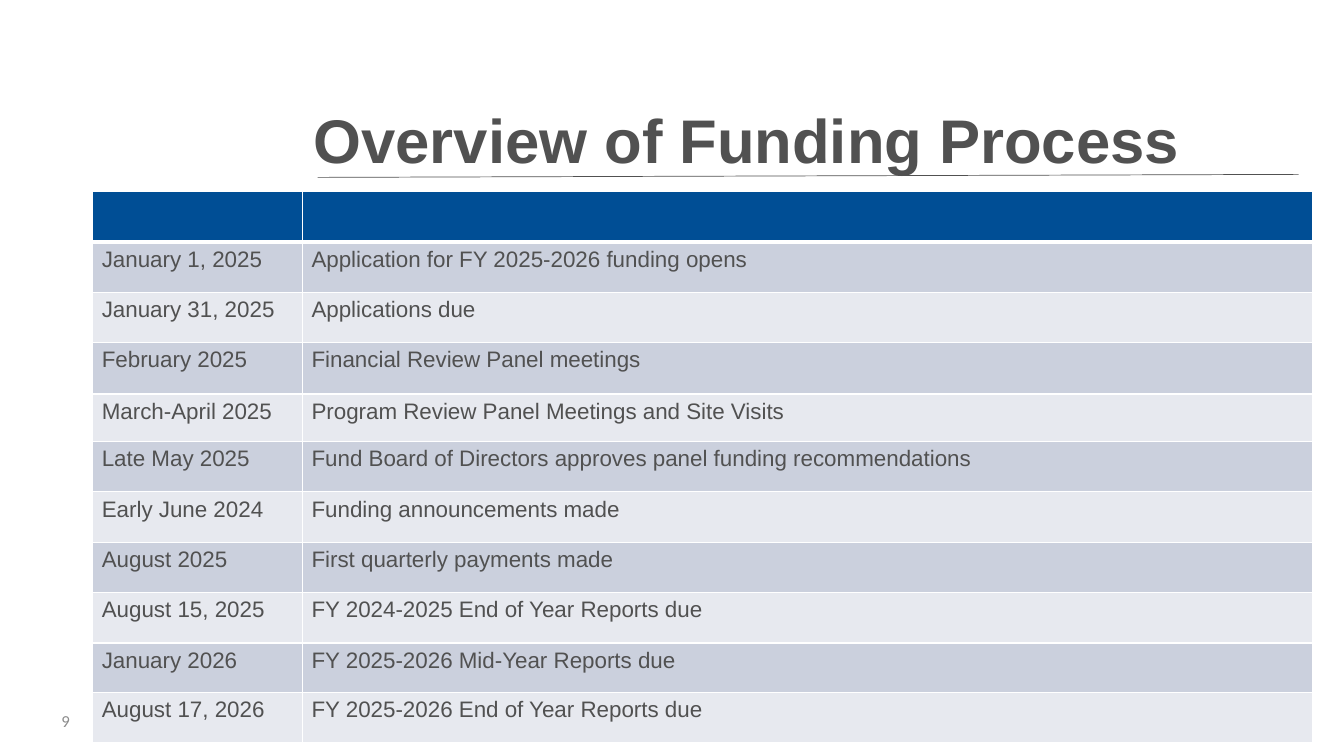
"""Build the funding process timeline slide."""
from dataclasses import dataclass

from lxml import etree
from pptx import Presentation
from pptx import util as u
from pptx.dml.color import RGBColor
from pptx.enum import shapes, text
from pptx.oxml.ns import qn

PX = 9144
COLORS = {
    "ink": "515151",
    "muted": "8C8C8C",
    "header": "004E95",
    "odd": "CBD0DD",
    "even": "E7E9EF",
    "border": "FFFFFF",
}
THIN, THICK = 1.06, 3.19
COLUMN_WIDTHS = (208, 1002)
HEADER_HEIGHT = 50


@dataclass
class Milestone:
    date: str
    event: str
    height: int = 50


MILESTONES = [
    Milestone("January 1, 2025", "Application for FY 2025-2026 funding opens"),
    Milestone("January 31, 2025", "Applications due"),
    Milestone("February 2025", "Financial Review Panel meetings", 51),
    Milestone("March-April 2025", "Program Review Panel Meetings and Site Visits", 47),
    Milestone("Late May 2025", "Fund Board of Directors approves panel funding recommendations"),
    Milestone("Early June 2024", "Funding announcements made"),
    Milestone("August 2025", "First quarterly payments made"),
    Milestone("August 15, 2025", "FY 2024-2025 End of Year Reports due"),
    Milestone("January 2026", "FY 2025-2026 Mid-Year Reports due", 49),
    Milestone("August 17, 2026", "FY 2025-2026 End of Year Reports due"),
]


def px(n: int) -> u.Emu:
    return u.Emu(n * PX)


def rgb(name: str) -> RGBColor:
    return RGBColor.from_string(COLORS[name])


def style(p, size: int, color: str, font: str = "Arial", bold: bool = False) -> None:
    p.alignment = text.PP_ALIGN.LEFT
    for r in p.runs:
        r.font.size = u.Pt(size)
        r.font.name = font
        r.font.bold = bold
        r.font.color.rgb = rgb(color)


def add_borders(cell, top: float, bottom: float) -> None:
    tc_pr = cell._tc.get_or_add_tcPr()
    for side, width in (("L", THIN), ("R", THIN), ("T", top), ("B", bottom)):
        ln = etree.SubElement(tc_pr, qn(f"a:ln{side}"), w=str(int(u.Pt(width))))
        fill = etree.SubElement(ln, qn("a:solidFill"))
        etree.SubElement(fill, qn("a:srgbClr"), val=COLORS["border"])


def fill_cell(cell, color: str, top: float, bottom: float) -> None:
    add_borders(cell, top, bottom)
    cell.fill.solid()
    cell.fill.fore_color.rgb = rgb(color)
    cell.margin_left = cell.margin_right = px(9)
    cell.margin_top = cell.margin_bottom = px(5)


def add_title(s) -> None:
    sp = s.shapes.title
    sp.left, sp.top, sp.width, sp.height = px(301), px(54), px(940), px(126)
    tf = sp.text_frame
    tf.text = "Overview of Funding Process"
    tf.auto_size = text.MSO_AUTO_SIZE.NONE
    tf.vertical_anchor = text.MSO_ANCHOR.BOTTOM
    p = tf.paragraphs[0]
    p.line_spacing = 0.9
    style(p, 44, "ink", bold=True)


def add_rule(s) -> None:
    line = s.shapes.add_connector(
        shapes.MSO_CONNECTOR.STRAIGHT, px(315), px(176), px(1288), px(173))
    line.line.color.rgb = rgb("ink")
    line.line.width = u.Pt(0.5)
    etree.SubElement(line._element.spPr, qn("a:effectLst"))


def add_page_number(s) -> None:
    sp = s.shapes.add_textbox(px(51), px(695), px(300), px(40))
    tf = sp.text_frame
    tf.word_wrap = True
    tf.vertical_anchor = text.MSO_ANCHOR.MIDDLE
    tf.text = "9"
    style(tf.paragraphs[0], 12, "muted", font="Calibri")


def add_timeline(s) -> None:
    heights = [HEADER_HEIGHT] + [m.height for m in MILESTONES]
    table = s.shapes.add_table(
        len(heights), len(COLUMN_WIDTHS), px(92), px(190),
        px(sum(COLUMN_WIDTHS)), px(sum(heights))).table
    for column, width in zip(table.columns, COLUMN_WIDTHS):
        column.width = px(width)
    for row, height in zip(table.rows, heights):
        row.height = px(height)
    for cell in table.rows[0].cells:
        fill_cell(cell, "header", THIN, THICK)
    for i, m in enumerate(MILESTONES, 1):
        for cell, words in zip(table.rows[i].cells, (m.date, m.event)):
            fill_cell(cell, "odd" if i % 2 else "even", THICK if i == 1 else THIN, THIN)
            cell.text_frame.text = words
            style(cell.text_frame.paragraphs[0], 16, "ink")


def main() -> None:
    prs = Presentation()
    prs.slide_width, prs.slide_height = px(1333), px(750)
    s = prs.slides.add_slide(prs.slide_layouts[5])
    add_rule(s)
    add_title(s)
    add_page_number(s)
    add_timeline(s)
    prs.save("out.pptx")


if __name__ == "__main__":
    main()
